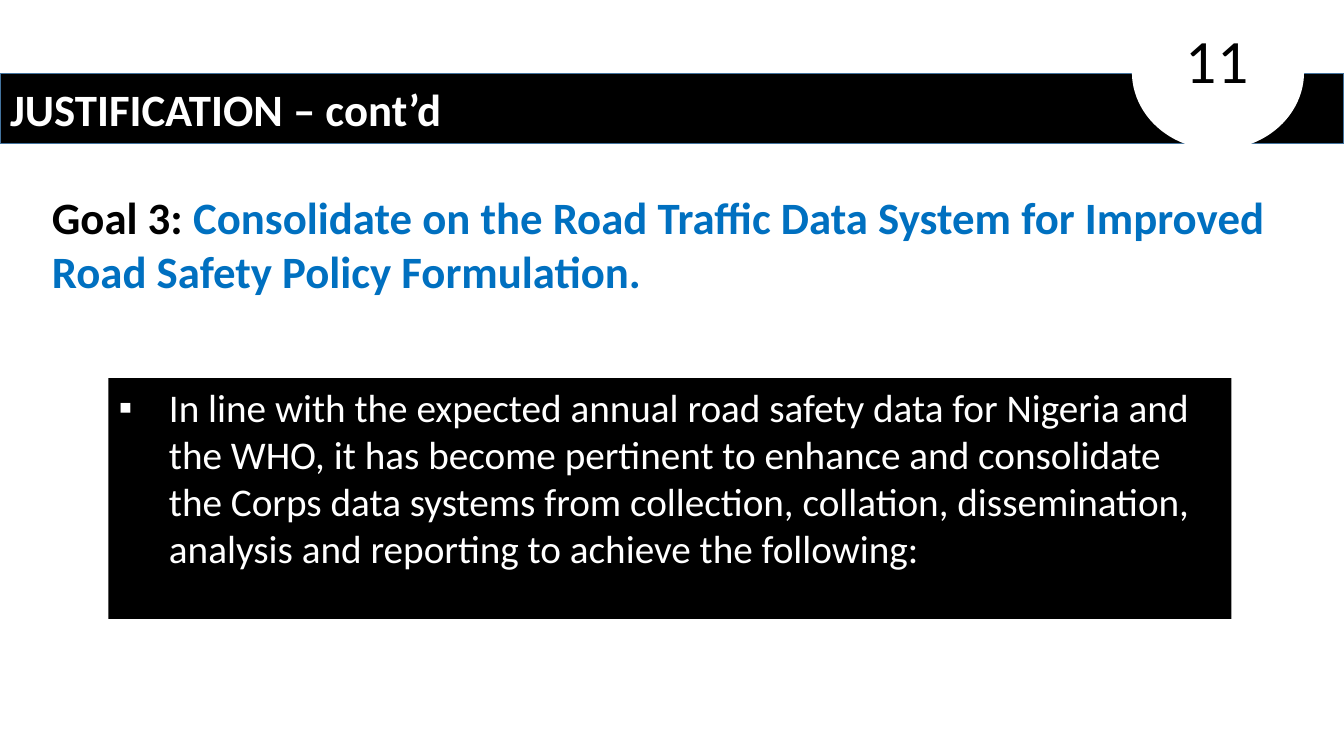
import pptx
import pptx.util
import pptx.dml.color
import pptx.enum.shapes
import pptx.enum.text
import pptx.oxml.ns
import lxml.etree

Pt = pptx.util.Pt
kinds = pptx.enum.shapes.MSO_SHAPE
anchor = pptx.enum.text.MSO_ANCHOR
left = pptx.enum.text.PP_ALIGN.LEFT


def paint(target, tint):
    target.solid()
    target.fore_color.rgb = pptx.dml.color.RGBColor.from_string(tint)


def write(shape, runs, size, bold, side):
    frame = shape.text_frame
    looks = {"word_wrap": True, "vertical_anchor": side,
             "auto_size": pptx.enum.text.MSO_AUTO_SIZE.NONE}
    for name, value in looks.items():
        setattr(frame, name, value)
    line = frame.paragraphs[0]
    for name, value in {"alignment": left, "space_before": Pt(0)}.items():
        setattr(line, name, value)
    for words, tint in runs:
        run = line.add_run()
        run.text = words
        for name, value in {"name": "Calibri", "size": Pt(size), "bold": bold}.items():
            setattr(run.font, name, value)
        paint(run.font.fill, tint)
    return line


deck = pptx.Presentation()
deck.slide_width, deck.slide_height = Pt(960), Pt(540)
slide = deck.slides.add_slide(deck.slide_layouts[1])
title, body = slide.placeholders
goal = slide.shapes.add_textbox(0, 0, 0, 0)
badge = slide.shapes.add_shape(kinds.FLOWCHART_DELAY, 0, 0, 0, 0)
number = slide.shapes.add_textbox(0, 0, 0, 0)

# Places
places = [
    (title, (0, 52.5, 960, 50)),
    (goal, (30, 132, 899, 85)),
    (body, (77.5, 270, 802, 172)),
    (badge, (814.5, -10, 111, 123)),
    (number, (840, 12, 59, 111)),
]
for shape, box in places:
    for name, value in zip(("left", "top", "width", "height"), box):
        setattr(shape, name, Pt(value))

# Header band
paint(title.fill, "000000")
paint(title.line.fill, "43739E")
title.line.width = Pt(1)
write(title, [("JUSTIFICATION – cont’d", "FFFFFF")], 32, True, anchor.MIDDLE)

# Goal statement
write(goal, [
    ("Goal 3: ", "000000"),
    ("Consolidate on the Road Traffic Data System for Improved "
     "Road Safety Policy Formulation.", "0070C0"),
], 32, True, anchor.TOP)

# Black panel with a square bullet
paint(body.fill, "000000")
point = write(body, [(
    "In line with the expected annual road safety data for Nigeria and the WHO, "
    "it has become pertinent to enhance and consolidate the Corps data systems "
    "from collection, collation, dissemination, analysis and reporting to achieve "
    "the following:", "FFFFFF")], 28, False, anchor.TOP)
props = point._p.get_or_add_pPr()
props.set("marL", str(Pt(36)))
props.set("indent", str(Pt(-36)))
for tag, key, value in (("a:buFont", "typeface", "Arial"), ("a:buChar", "char", "▪")):
    lxml.etree.SubElement(props, pptx.oxml.ns.qn(tag)).set(key, value)

# Page number badge
badge.rotation = 90
badge.shadow.inherit = False
paint(badge.fill, "FFFFFF")
badge.line.fill.background()
write(number, [("11", "000000")], 44, False, anchor.TOP)

deck.save("out.pptx")
